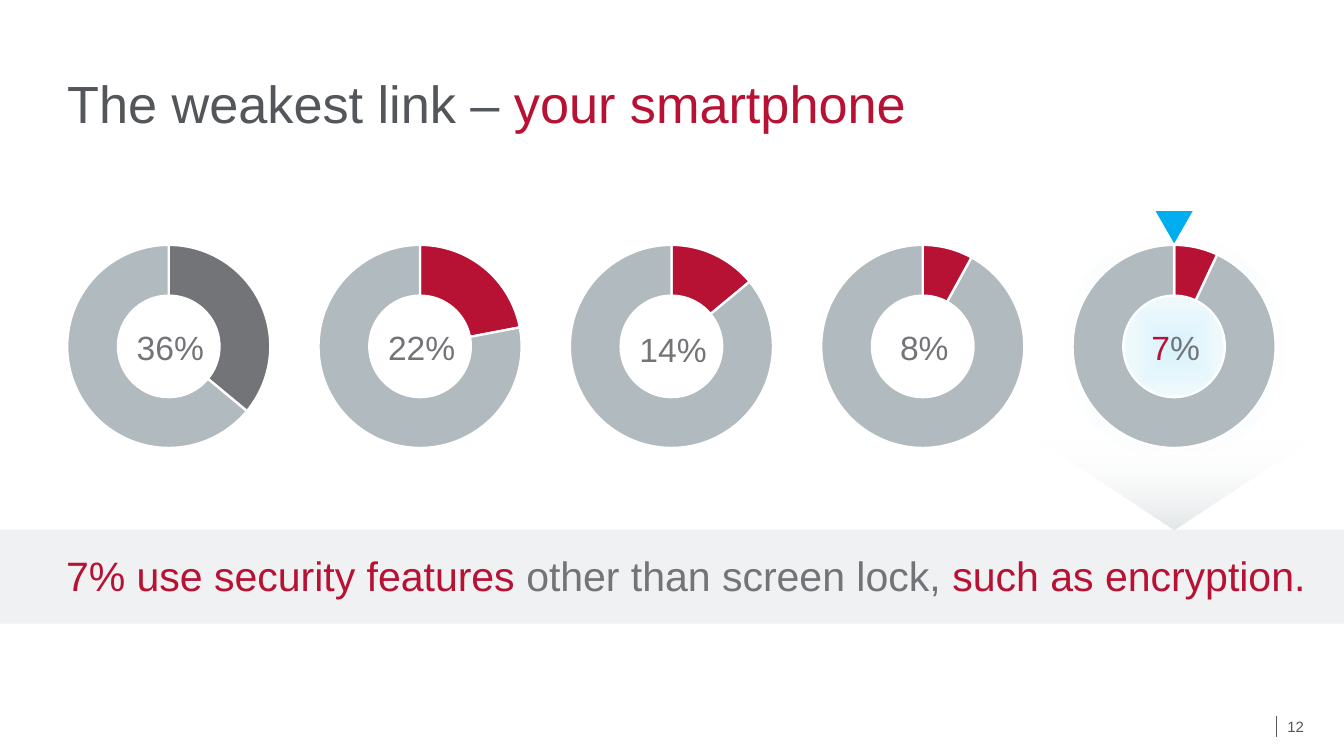
from lxml import etree
from pptx import Presentation
from pptx.chart import data
from pptx.dml.color import RGBColor
from pptx.enum import chart as charts, shapes, text
from pptx.oxml import parse_xml
from pptx.oxml.ns import nsdecls, qn
from pptx.util import Cm, Pt

# Content
TITLE = [("The weakest link – ", "dark"), ("your smartphone", "red")]
MESSAGE = [("7% use security features ", "red"),
           ("other than screen lock, ", "gray"),
           ("such as encryption.", "red")]
PAGE = [("12", "dark")]
# Share, slice colour, label runs, label drop in cm
RINGS = [
    (36, "gray", [("36%", "gray")], 0),
    (22, "red", [("22%", "gray")], 0),
    (14, "red", [("14%", "gray")], 0.05),
    (8, "red", [("8%", "gray")], 0),
    (7, "red", [("7", "red"), ("%", "gray")], 0),
]

THEME = {
    "font": "Arial",
    "colors": {"dark": "53565A", "red": "B71234", "gray": "727478",
               "ring": "B1BABF", "band": "EFF1F2", "blue": "00AEEF",
               "arrow": "D0D6D9", "glow": "E7E8E8", "white": "FFFFFF"},
    "title": 28, "message": 22, "label": 18, "page": 8,
}

# Geometry in cm
WIDTH, HEIGHT = 25.4, 14.29
FIRST_X, PITCH, CENTER_Y = 3.19, 4.75, 6.55
CHART_W, CHART_H, RING = 5.61, 4.57, 3.84
LABEL_W, LABEL_H, LABEL_TOP = 2.46, 1.02, 6.05
BAND_TOP, BAND_H = 10.01, 1.78
FOCUS_X = FIRST_X + PITCH * (len(RINGS) - 1)


def color(name):
    return RGBColor.from_string(THEME["colors"][name])


def box(left, top, width, height):
    return Cm(left), Cm(top), Cm(width), Cm(height)


def write(shape, runs, size, anchor, spacing=None, align=None, inset=True,
          outline=False):
    frame = shape.text_frame
    frame.word_wrap = True
    frame.auto_size = text.MSO_AUTO_SIZE.NONE
    frame.vertical_anchor = anchor
    if not inset:
        frame.margin_left = frame.margin_right = 0
        frame.margin_top = frame.margin_bottom = 0
    paragraph = frame.paragraphs[0]
    paragraph.alignment = align
    paragraph.line_spacing = spacing
    for words, name in runs:
        run = paragraph.add_run()
        run.text = words
        run.font.name = THEME["font"]
        run.font.size = Pt(THEME[size])
        run.font.color.rgb = color(name)
        if outline:
            run.font._element.insert(0, parse_xml(
                f'<a:ln {nsdecls("a")} w="3175"><a:solidFill><a:srgbClr '
                f'val="{THEME["colors"][name]}"/></a:solidFill></a:ln>'))


def add_shape(slide, kind, place, fill):
    shape = slide.shapes.add_shape(kind, *place)
    shape.shadow.inherit = False
    shape.fill.solid()
    shape.fill.fore_color.rgb = color(fill)
    shape.line.fill.background()
    return shape


def fade(shape, start, start_alpha, end, direction):
    """Replace a solid fill with a gradient that ends fully transparent."""
    stops = "".join(
        f'<a:gs pos="{position}"><a:srgbClr val="{THEME["colors"][name]}">'
        f'<a:alpha val="{alpha * 1000}"/></a:srgbClr></a:gs>'
        for position, name, alpha in ((0, start, start_alpha), (100000, end, 0)))
    gradient = parse_xml(
        f'<a:gradFill {nsdecls("a")} rotWithShape="1">'
        f'<a:gsLst>{stops}</a:gsLst>{direction}</a:gradFill>')
    properties = shape._element.spPr
    properties.replace(properties.find(qn("a:solidFill")), gradient)


def add_ring(slide, center, share, slice_color):
    values = data.CategoryChartData()
    values.categories = ["1", "2"]
    values.add_series("Series 1", (share, 100 - share))
    place = box(center - CHART_W / 2, CENTER_Y - CHART_H / 2, CHART_W, CHART_H)
    chart = slide.shapes.add_chart(
        charts.XL_CHART_TYPE.DOUGHNUT, *place, values).chart
    chart.has_title = chart.has_legend = False
    chart.font.name = THEME["font"]
    chart.font.size = Pt(THEME["label"])
    chart.font.color.rgb = color("dark")
    plot = chart.plots[0]
    plot.vary_by_categories = True
    for index, name in enumerate((slice_color, "ring")):
        style = plot.series[0].points[index].format
        style.fill.solid()
        style.fill.fore_color.rgb = color(name)
        style.line.color.rgb = color("white")
        style.line.width = Pt(1.25)

    # Hole size, centred plot area and clear background
    space = chart._chartSpace
    doughnut = space.find(".//" + qn("c:doughnutChart"))
    hole = doughnut.find(qn("c:holeSize"))
    if hole is None:
        hole = etree.SubElement(doughnut, qn("c:holeSize"))
    hole.set("val", "50")
    area = doughnut.getparent()
    for old in area.findall(qn("c:layout")):
        area.remove(old)
    w, h = RING / CHART_W, RING / CHART_H
    sizes = (("x", (1 - w) / 2), ("y", (1 - h) / 2), ("w", w), ("h", h))
    area.insert(0, parse_xml(
        f'<c:layout {nsdecls("c")}><c:manualLayout>'
        '<c:layoutTarget val="inner"/><c:xMode val="edge"/>'
        '<c:yMode val="edge"/>'
        + "".join(f'<c:{key} val="{value:.4f}"/>' for key, value in sizes)
        + "</c:manualLayout></c:layout>"))
    space.find(qn("c:chart")).addnext(parse_xml(
        f'<c:spPr {nsdecls("c", "a")}><a:noFill/>'
        '<a:ln><a:noFill/></a:ln></c:spPr>'))


def main():
    presentation = Presentation()
    presentation.slide_width, presentation.slide_height = Cm(WIDTH), Cm(HEIGHT)
    slide = presentation.slides.add_slide(presentation.slide_layouts[5])
    kinds, anchors = shapes.MSO_SHAPE, text.MSO_ANCHOR

    # Title
    title = slide.shapes.title
    title.left, title.top, title.width, title.height = box(1.27, 0.5, 22.86, 2.04)
    write(title, TITLE, "title", anchors.BOTTOM, 0.9, text.PP_ALIGN.LEFT, False)

    # Arrow down to the band, and glow behind the last ring
    arrow = add_shape(slide, kinds.ISOSCELES_TRIANGLE,
                      box(FOCUS_X - 2.67, BAND_TOP - 1.75, 5.34, 1.75), "arrow")
    arrow.rotation = 180
    fade(arrow, "arrow", 60, "white", '<a:lin ang="5400000" scaled="0"/>')
    add_shape(slide, kinds.RECTANGLE, box(0, BAND_TOP, WIDTH, BAND_H), "band")
    glow = add_shape(slide, kinds.OVAL,
                     box(FOCUS_X - 2.12, CENTER_Y - 2.12, 4.24, 4.24), "blue")
    fade(glow, "blue", 16, "glow",
         '<a:path path="shape"><a:fillToRect l="50000" t="50000" '
         'r="50000" b="50000"/></a:path>')

    # Rings with their labels
    for index, (share, slice_color, label, drop) in enumerate(RINGS):
        center = FIRST_X + PITCH * index
        add_ring(slide, center, share, slice_color)
        caption = slide.shapes.add_textbox(*box(
            center + 0.03 - LABEL_W / 2, LABEL_TOP + drop, LABEL_W, LABEL_H))
        write(caption, label, "label", anchors.TOP,
              align=text.PP_ALIGN.CENTER, outline=True)

    # Marker above the last ring
    marker = add_shape(slide, kinds.ISOSCELES_TRIANGLE,
                       box(FOCUS_X - 0.35, 3.99, 0.7, 0.61), "blue")
    marker.rotation = 180

    # Message
    message = slide.shapes.add_textbox(*box(1.25, 9.6, 23.62, 2.62))
    write(message, MESSAGE, "message", anchors.MIDDLE, 0.95, inset=False)

    # Page number and its rule
    rule = slide.shapes.add_connector(shapes.MSO_CONNECTOR.STRAIGHT, Cm(24.13),
                                      Cm(13.54), Cm(24.13), Cm(13.94))
    rule.line.color.rgb = color("dark")
    rule.line.width = Pt(0.5)
    etree.SubElement(rule._element.spPr, qn("a:effectLst"))
    page = slide.shapes.add_textbox(*box(24.33, 13.54, 0.64, 0.43))
    write(page, PAGE, "page", anchors.MIDDLE, 0.9, inset=False)

    presentation.save("out.pptx")


if __name__ == "__main__":
    main()
